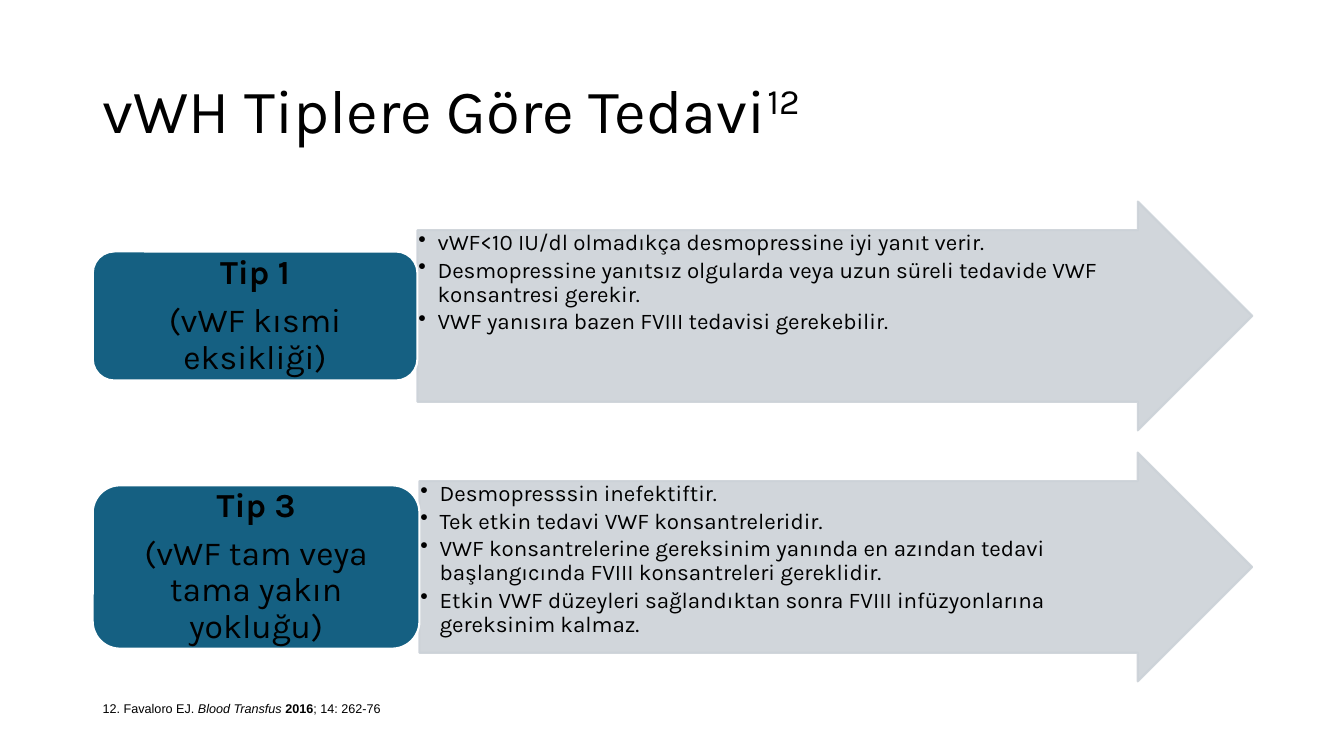
from dataclasses import dataclass

from lxml import etree
from pptx import Presentation
from pptx import util as u
from pptx.dml.color import RGBColor
from pptx.enum import shapes, text
from pptx.oxml.ns import qn


@dataclass(frozen=True)
class Theme:
    ink: str = "000000"
    white: str = "FFFFFF"
    teal: str = "156082"
    grey: str = "CCD2D8"
    font: str = "Karla"
    note_font: str = "Arial"
    title: int = 44
    label: int = 24
    body: int = 16
    note: int = 9


theme = Theme()


def add_text(s, box, paragraphs, size, font=theme.font, align=text.PP_ALIGN.LEFT,
             anchor=text.MSO_ANCHOR.TOP, inset=(0.1, 0.05), spacing=0.9,
             after=0, bullet=False, wrap=True):
    """Each paragraph is a list of (text, style) runs; style is b, i, sup or empty."""
    tf = s.shapes.add_textbox(*map(u.Inches, box)).text_frame
    tf.word_wrap = wrap
    tf.vertical_anchor = anchor
    tf.margin_left = tf.margin_right = u.Inches(inset[0])
    tf.margin_top = tf.margin_bottom = u.Inches(inset[1])
    for n, runs in enumerate(paragraphs):
        p = tf.paragraphs[0] if n == 0 else tf.add_paragraph()
        p.alignment = align
        p.line_spacing = spacing
        p.space_after = u.Pt(size * after)
        if bullet:
            pPr = p._p.get_or_add_pPr()
            pPr.set("marL", str(u.Inches(0.19)))
            pPr.set("indent", str(-u.Inches(0.19)))
            etree.SubElement(pPr, qn("a:buChar")).set("char", "•")
        for words, style in runs:
            r = p.add_run()
            r.text = words
            r.font.name = font
            r.font.size = u.Pt(size)
            r.font.color.rgb = RGBColor.from_string(theme.ink)
            r.font.bold = style == "b"
            r.font.italic = style == "i"
            if style == "sup":
                r._r.get_or_add_rPr().set("baseline", "30000")
    return tf


def add_block(s, kind, box, fill, line, opacity=100):
    sp = s.shapes.add_shape(kind, *map(u.Inches, box))
    sp.shadow.inherit = False
    sp.fill.solid()
    sp.fill.fore_color.rgb = RGBColor.from_string(fill)
    sp.line.color.rgb = RGBColor.from_string(line)
    sp.line.width = u.Pt(1.5)
    if opacity < 100:
        for color in sp._element.spPr.iter(qn("a:srgbClr")):
            etree.SubElement(color, qn("a:alpha")).set("val", str(opacity * 1000))
    return sp


prs = Presentation()
prs.slide_width = u.Inches(13.33)
prs.slide_height = u.Inches(7.5)
s = prs.slides.add_slide(prs.slide_layouts[6])

# Title
add_text(s, (0.92, 0.4, 11.5, 1.45),
         [[("vWH Tiplere Göre Tedavi", ""), ("12", "sup")]],
         theme.title, anchor=text.MSO_ANCHOR.MIDDLE)

# Treatment rows: label, its detail, arrow top, label width and height, label inset, bullets
rows = [
    ("Tip 1", "(vWF kısmi eksikliği)", 2, 3.22, 1.28, 0.06, [
        "vWF<10 IU/dl olmadıkça desmopressine iyi yanıt verir.",
        "Desmopressine yanıtsız olgularda veya uzun süreli tedavide VWF konsantresi gerekir.",
        "VWF yanısıra bazen FVIII tedavisi gerekebilir.",
    ]),
    ("Tip 3", "(vWF tam veya tama yakın yokluğu)", 4.49, 3.24, 1.62, 0.08, [
        "Desmopresssin inefektiftir.",
        "Tek etkin tedavi VWF konsantreleridir.",
        "VWF konsantrelerine gereksinim yanında en azından tedavi başlangıcında "
        "FVIII konsantreleri gereklidir.",
        "Etkin VWF düzeyleri sağlandıktan sonra FVIII infüzyonlarına gereksinim kalmaz.",
    ]),
]
left, right, arrow_h = 0.92, 12.42, 2.27

for name, detail, top, label_w, label_h, pad, bullets in rows:
    # Arrow with its bullets
    arrow_x = left + label_w
    arrow_w = right - arrow_x
    arrow = add_block(s, shapes.MSO_SHAPE.RIGHT_ARROW, (arrow_x, top, arrow_w, arrow_h),
                      theme.grey, theme.grey, opacity=90)
    arrow.adjustments[0] = 0.75
    arrow.adjustments[1] = 0.5
    add_text(s, (arrow_x, top + arrow_h / 8, arrow_w - 0.85, arrow_h * 0.75),
             [[(b, "")] for b in bullets], theme.body,
             inset=(0.01, 0.01), after=0.15, bullet=True)

    # Label centred on the arrow's height
    label_y = top + (arrow_h - label_h) / 2
    add_block(s, shapes.MSO_SHAPE.ROUNDED_RECTANGLE, (left, label_y, label_w, label_h),
              theme.teal, theme.white)
    add_text(s, (left + pad, label_y + pad, label_w - 2 * pad, label_h - 2 * pad),
             [[(name, "b")], [(detail, "")]], theme.label,
             align=text.PP_ALIGN.CENTER, anchor=text.MSO_ANCHOR.MIDDLE, after=0.35)

# Reference
tf = add_text(s, (0.92, 6.9, 2.99, 0.25),
              [[("12. Favaloro EJ. ", ""), ("Blood Transfus ", "i"),
                ("2016", "b"), ("; 14: 262-76", "")]],
              theme.note, font=theme.note_font, spacing=1.0, wrap=False)
tf.auto_size = text.MSO_AUTO_SIZE.SHAPE_TO_FIT_TEXT

prs.save("out.pptx")
